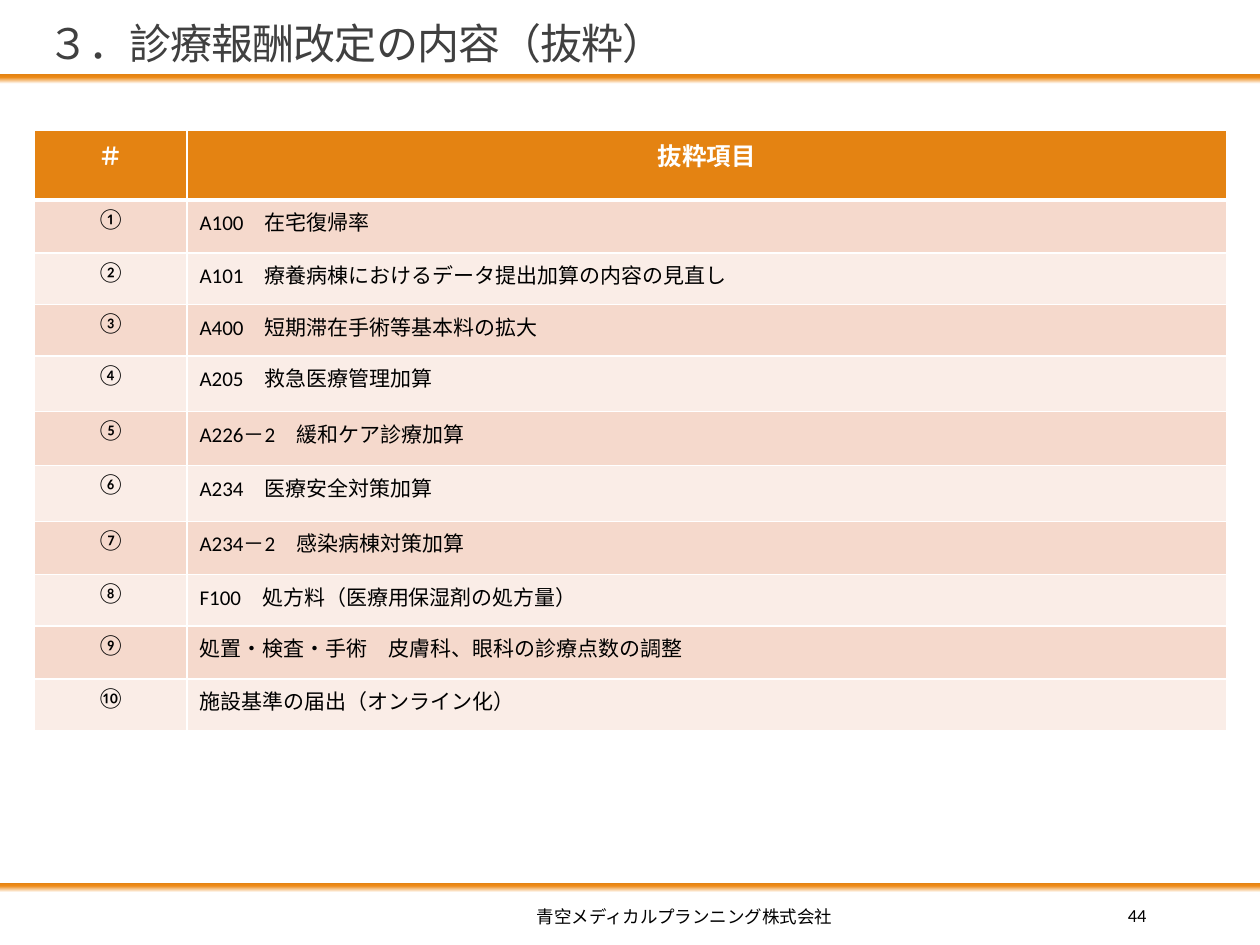
from lxml.etree import SubElement
from pptx import Presentation
from pptx.dml.color import RGBColor
from pptx.enum.shapes import MSO_SHAPE as Shape
from pptx.enum.text import MSO_ANCHOR as Anchor, PP_ALIGN as Align
from pptx.oxml import parse_xml
from pptx.oxml.ns import nsdecls, qn
from pptx.util import Cm, Pt

TITLE = "３．診療報酬改定の内容（抜粋）"
COMPANY = "青空メディカルプランニング株式会社"
PAGE_NUMBER = "44"
HEADER = ("＃", "抜粋項目")
ITEMS = [
    ("①", "A100　在宅復帰率"),
    ("②", "A101　療養病棟におけるデータ提出加算の内容の見直し"),
    ("③", "A400　短期滞在手術等基本料の拡大"),
    ("④", "A205　救急医療管理加算"),
    ("⑤", "A226－2　緩和ケア診療加算"),
    ("⑥", "A234　医療安全対策加算"),
    ("⑦", "A234－2　感染病棟対策加算"),
    ("⑧", "F100　処方料（医療用保湿剤の処方量）"),
    ("⑨", "処置・検査・手術　皮膚科、眼科の診療点数の調整"),
    ("⑩", "施設基準の届出（オンライン化）"),
]
COLUMN_WIDTHS = (3.07, 20.95)
ROW_HEIGHTS = (1.4, 1.07, 1.04, 1.04, 1.12, 1.09, 1.12, 1.07, 1.04, 1.07, 1.04)
BAND_TOPS = (17.8, 1.5)


class Theme:
    orange, light_orange = "E48312", "ED8A17"
    stripes = ("F5D9CC", "FAEDE7")
    white, black, grey = "FFFFFF", "000000", "404040"
    latin, japanese, heading = "Calibri", "Noto Sans CJK JP", "Arial"
    title_size, header_size, body_size = 24, 14, 12
    company_size, page_size = 10, 10.5


def style(paragraph, size, color, latin, asian=Theme.japanese, bold=False, align=Align.LEFT):
    paragraph.alignment = align
    for run in paragraph.runs:
        font = run.font
        font.size, font.bold, font.name = Pt(size), bold, latin
        font.color.rgb = RGBColor.from_string(color)
        SubElement(run._r.get_or_add_rPr(), qn("a:ea"), typeface=asian)


def add_text(slide, box, text, anchor=Anchor.TOP, wrap=True):
    frame = slide.shapes.add_textbox(*map(Cm, box)).text_frame
    frame.text = text
    frame.word_wrap = wrap
    frame.vertical_anchor = anchor
    return frame


def add_band(slide, top):
    """Full-width bar that fades from orange at the top to white."""
    band = slide.shapes.add_shape(Shape.RECTANGLE, 0, Cm(top), Cm(25.4), Cm(1.19))
    band.shadow.inherit = False
    band.line.fill.background()
    stops = ((84, Theme.white), (95, Theme.light_orange), (100, Theme.orange))
    stop_xml = "".join(
        f'<a:gs pos="{position * 1000}"><a:srgbClr val="{color}"/></a:gs>'
        for position, color in stops
    )
    gradient = parse_xml(
        f'<a:gradFill {nsdecls("a")} rotWithShape="1"><a:gsLst>{stop_xml}</a:gsLst>'
        '<a:lin ang="16200000" scaled="0"/></a:gradFill>'
    )
    band._element.spPr.find(qn("a:prstGeom")).addnext(gradient)


def set_borders(cell, bottom_width):
    properties = cell._tc.get_or_add_tcPr()
    for side, width in (("L", 1), ("R", 1), ("T", 1), ("B", bottom_width)):
        line = SubElement(properties, qn(f"a:ln{side}"), w=str(Pt(width)))
        fill = SubElement(line, qn("a:solidFill"))
        SubElement(fill, qn("a:srgbClr"), val=Theme.white)


def add_item_table(slide):
    rows = [HEADER] + ITEMS
    table = slide.shapes.add_table(
        len(rows), len(HEADER), Cm(0.7), Cm(2.63),
        Cm(sum(COLUMN_WIDTHS)), Cm(sum(ROW_HEIGHTS)),
    ).table
    for column, width in zip(table.columns, COLUMN_WIDTHS):
        column.width = Cm(width)
    for row_index, (texts, height) in enumerate(zip(rows, ROW_HEIGHTS)):
        table.rows[row_index].height = Cm(height)
        is_header = row_index == 0
        fill_color = Theme.orange if is_header else Theme.stripes[(row_index - 1) % 2]
        for column_index, text in enumerate(texts):
            cell = table.cell(row_index, column_index)
            cell.text_frame.text = text
            is_number = column_index == 0
            style(
                cell.text_frame.paragraphs[0],
                Theme.header_size if is_header else Theme.body_size,
                Theme.white if is_header else Theme.black,
                Theme.latin,
                Theme.latin if is_number and not is_header else Theme.japanese,
                bold=is_header,
                align=Align.CENTER if is_header or is_number else Align.LEFT,
            )
            set_borders(cell, 3 if is_header else 1)
            cell.fill.solid()
            cell.fill.fore_color.rgb = RGBColor.from_string(fill_color)


def main():
    presentation = Presentation()
    presentation.slide_width, presentation.slide_height = Cm(25.4), Cm(19.05)
    slide = presentation.slides.add_slide(presentation.slide_layouts[6])

    for top in BAND_TOPS:
        add_band(slide, top)

    company = add_text(slide, (10.57, 18.14, 6.58, 0.69), COMPANY, wrap=False)
    style(company.paragraphs[0], Theme.company_size, Theme.black, Theme.japanese)

    title = add_text(slide, (0.7, 0.4, 24.02, 1.1), TITLE, Anchor.BOTTOM).paragraphs[0]
    title.line_spacing = 0.85
    style(title, Theme.title_size, Theme.grey, Theme.heading)
    title.runs[0]._r.get_or_add_rPr().set("spc", "-50")

    page = add_text(slide, (20.62, 17.93, 2.74, 1.02), PAGE_NUMBER, Anchor.MIDDLE)
    style(page.paragraphs[0], Theme.page_size, Theme.black, Theme.latin, align=Align.RIGHT)

    add_item_table(slide)
    presentation.save("out.pptx")


if __name__ == "__main__":
    main()
